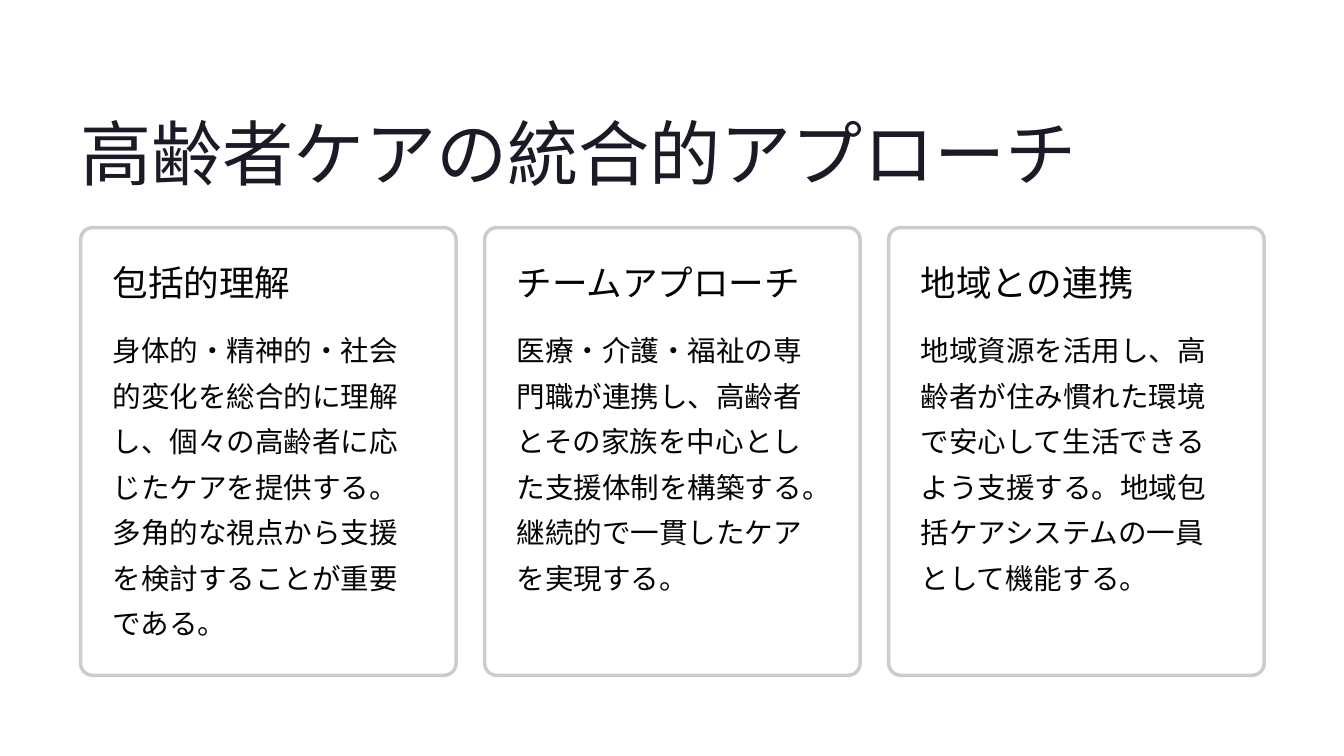
import lxml.etree
import pptx
import pptx.dml.color
import pptx.enum.shapes
import pptx.enum.text
import pptx.oxml.ns
import pptx.util

Inches = pptx.util.Inches
Pt = pptx.util.Pt

COLORS = {"title": "1B1B27", "text": "030303", "card": "FFFFFF", "border": "CCCCCC"}

CARDS = [
    ("包括的理解",
     "身体的・精神的・社会的変化を総合的に理解し、個々の高齢者に応じたケアを提供する。"
     "多角的な視点から支援を検討することが重要である。"),
    ("チームアプローチ",
     "医療・介護・福祉の専門職が連携し、高齢者とその家族を中心とした支援体制を構築する。"
     "継続的で一貫したケアを実現する。"),
    ("地域との連携",
     "地域資源を活用し、高齢者が住み慣れた環境で安心して生活できるよう支援する。"
     "地域包括ケアシステムの一員として機能する。"),
]

MARGIN = 0.96
CARD_TOP, CARD_WIDTH, CARD_HEIGHT = 2.71, 4.47, 5.33
CARD_STEP = 4.81
PADDING = 0.38
TEXT_WIDTH = 3.7


def rgb(name):
    return pptx.dml.color.RGBColor.from_string(COLORS[name])


def write_text(frame, text, *, font, size, color, spacing, wrap):
    frame.margin_left = frame.margin_top = frame.margin_right = frame.margin_bottom = 0
    frame.word_wrap = wrap
    frame.vertical_anchor = pptx.enum.text.MSO_ANCHOR.TOP
    para = frame.paragraphs[0]
    para.alignment = pptx.enum.text.PP_ALIGN.LEFT
    para.line_spacing = Pt(spacing)
    span = para.add_run()
    span.text = text
    span.font.name = font
    span.font.size = Pt(size)
    span.font.color.rgb = rgb(color)


class SlideBuilder:
    heading_font = "Inter"
    body_font = "Lato"

    def __init__(self, page):
        self.page = page

    def text(self, text, left, top, width, height, **style):
        box = self.page.shapes.add_textbox(
            Inches(left), Inches(top), Inches(width), Inches(height))
        write_text(box.text_frame, text, **style)

    def title(self, text):
        self.text(text, MARGIN, 1.25, 11.94, 1.07, font=self.heading_font,
                  size=61, color="title", spacing=76.5, wrap=False)

    def panel(self, left):
        """Draw the rounded, slightly transparent card background."""
        panel = self.page.shapes.add_shape(
            pptx.enum.shapes.MSO_SHAPE.ROUNDED_RECTANGLE,
            Inches(left), Inches(CARD_TOP), Inches(CARD_WIDTH), Inches(CARD_HEIGHT))
        panel.adjustments[0] = 0.032
        panel.shadow.inherit = False
        panel.fill.solid()
        panel.fill.fore_color.rgb = rgb("card")
        color = panel.fill._xPr.find(".//" + pptx.oxml.ns.qn("a:srgbClr"))
        lxml.etree.SubElement(color, pptx.oxml.ns.qn("a:alpha"), val="95000")
        panel.line.color.rgb = rgb("border")
        panel.line.width = Pt(3)

    def card(self, left, heading, body):
        self.panel(left)
        text_left = left + PADDING
        self.text(heading, text_left, CARD_TOP + PADDING, TEXT_WIDTH, 0.53,
                  font=self.heading_font, size=30.5, color="text", spacing=38, wrap=False)
        self.text(body, text_left, 3.83, TEXT_WIDTH, 3.82,
                  font=self.body_font, size=24.5, color="text", spacing=39, wrap=True)


def main():
    deck = pptx.Presentation()
    deck.slide_width, deck.slide_height = Inches(16), Inches(9)
    builder = SlideBuilder(deck.slides.add_slide(deck.slide_layouts[6]))
    builder.title("高齢者ケアの統合的アプローチ")
    for index, (heading, body) in enumerate(CARDS):
        builder.card(MARGIN + index * CARD_STEP, heading, body)
    deck.save("out.pptx")


if __name__ == "__main__":
    main()
